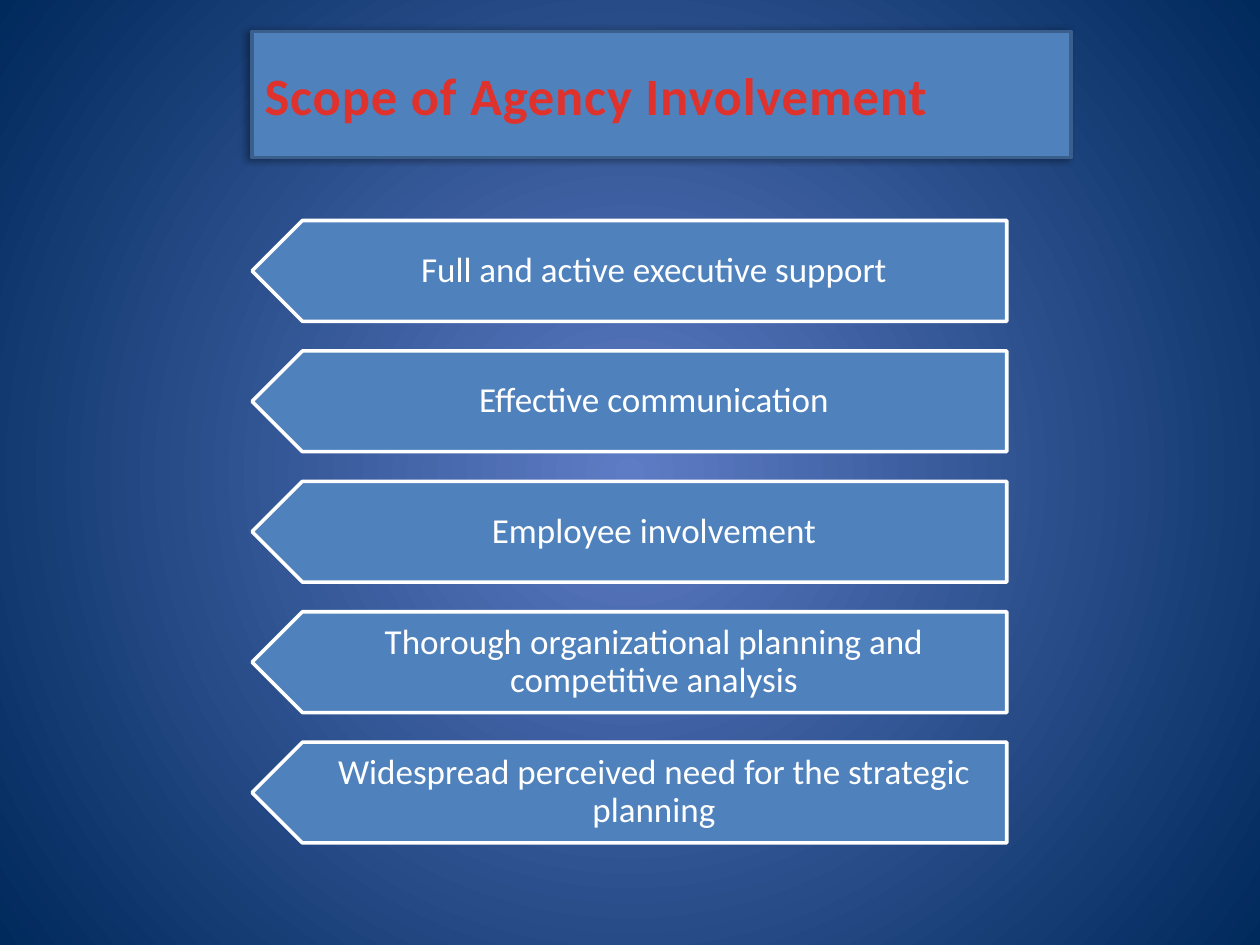
from lxml.etree import SubElement
from pptx import Presentation
from pptx.dml.color import RGBColor
from pptx.enum.shapes import MSO_SHAPE
from pptx.enum.text import MSO_ANCHOR, MSO_AUTO_SIZE, PP_ALIGN
from pptx.oxml import parse_xml
from pptx.oxml.ns import nsdecls, qn
from pptx.util import Inches, Pt

THEME = {
    "font": "Calibri",
    "title_size": 30,
    "item_size": 20,
    "fill": "4F81BD",
    "white": "FFFFFF",
    "title_line": "3A5F8C",
    "title_text": ("E0322D", "A2201C"),
    "background": ("5E7CC5", "00295C"),
    "line_width": 2,
}
ITEMS = [
    "Full and active executive support",
    "Effective communication",
    "Employee involvement",
    "Thorough organizational planning and competitive analysis",
    "Widespread perceived need for the strategic planning",
]


def write(frame, text, *, size, color=None, bold=False, align=PP_ALIGN.LEFT):
    frame.word_wrap = True
    frame.auto_size = MSO_AUTO_SIZE.NONE
    frame.vertical_anchor = MSO_ANCHOR.MIDDLE
    para = frame.paragraphs[0]
    para.alignment = align
    span = para.add_run()
    span.text = text
    span.font.name = THEME["font"]
    span.font.size = Pt(size)
    span.font.bold = bold
    if color:
        span.font.color.rgb = RGBColor.from_string(color)
    return para, span


def paint(shape, line):
    shape.fill.solid()
    shape.fill.fore_color.rgb = RGBColor.from_string(THEME["fill"])
    shape.line.color.rgb = RGBColor.from_string(line)
    shape.line.width = Pt(THEME["line_width"])


deck = Presentation()
deck.slide_width, deck.slide_height = Inches(10), Inches(7.5)
page = deck.slides.add_slide(deck.slide_layouts[5])
column = deck.slide_width * 0.2

backdrop = page.background.fill
backdrop.gradient()
for stop, color in zip(backdrop.gradient_stops, THEME["background"]):
    stop.color.rgb = RGBColor.from_string(color)
gradient = page._element.find(".//" + qn("a:gradFill"))
gradient.remove(gradient.find(qn("a:lin")))
circle = SubElement(gradient, qn("a:path"), path="circle")
SubElement(circle, qn("a:fillToRect"), l="50000", t="50000", r="50000", b="50000")

arrow_width, arrow_height = Inches(5.99), Inches(0.8)
first_row, row_step = Inches(1.75), Inches(1.035)
text_inset = arrow_height // 4
for row, item in enumerate(ITEMS):
    top = first_row + row * row_step
    arrow = page.shapes.add_shape(
        MSO_SHAPE.PENTAGON, int(column), top, arrow_width, arrow_height
    )
    arrow.rotation = 180
    arrow.shadow.inherit = False
    paint(arrow, THEME["white"])
    box = page.shapes.add_textbox(
        int(column) + text_inset, top, arrow_width - text_inset, arrow_height
    )
    frame = box.text_frame
    frame.margin_left, frame.margin_right = Inches(0.35), Inches(0.16)
    frame.margin_top = frame.margin_bottom = Inches(0.08)
    para, span = write(
        frame, item, size=THEME["item_size"], color=THEME["white"], align=PP_ALIGN.CENTER
    )
    para.line_spacing = 0.9

title = page.shapes.title
title.left, title.top = int(column), Inches(0.25)
title.width, title.height = int(deck.slide_width * 0.65), Inches(1)
title._element.spPr.append(parse_xml(
    f'<a:prstGeom {nsdecls("a")} prst="roundRect"><a:avLst>'
    '<a:gd name="adj" fmla="val 50000"/></a:avLst></a:prstGeom>'
))
paint(title, THEME["title_line"])
title._element.spPr.append(parse_xml(
    f'<a:effectLst {nsdecls("a")}>'
    f'<a:outerShdw blurRad="{Pt(4)}" dist="{Pt(3)}" dir="10800000" rotWithShape="0">'
    '<a:srgbClr val="000000"><a:alpha val="40000"/></a:srgbClr>'
    '</a:outerShdw></a:effectLst>'
))
para, span = write(
    title.text_frame, "Scope of Agency Involvement", size=THEME["title_size"], bold=True
)
para.space_before = Pt(THEME["title_size"] * 0.2)
indent = Inches(0.38)
para._p.get_or_add_pPr().set("marL", str(indent))
para._p.get_or_add_pPr().set("indent", str(-indent))
span.font.fill.gradient()
span.font.fill.gradient_angle = 270
for stop, color, position in zip(
    span.font.fill.gradient_stops, THEME["title_text"], (0.25, 1)
):
    stop.color.rgb = RGBColor.from_string(color)
    stop.position = position
span._r.get_or_add_rPr().set("spc", "50")

deck.save("out.pptx")
